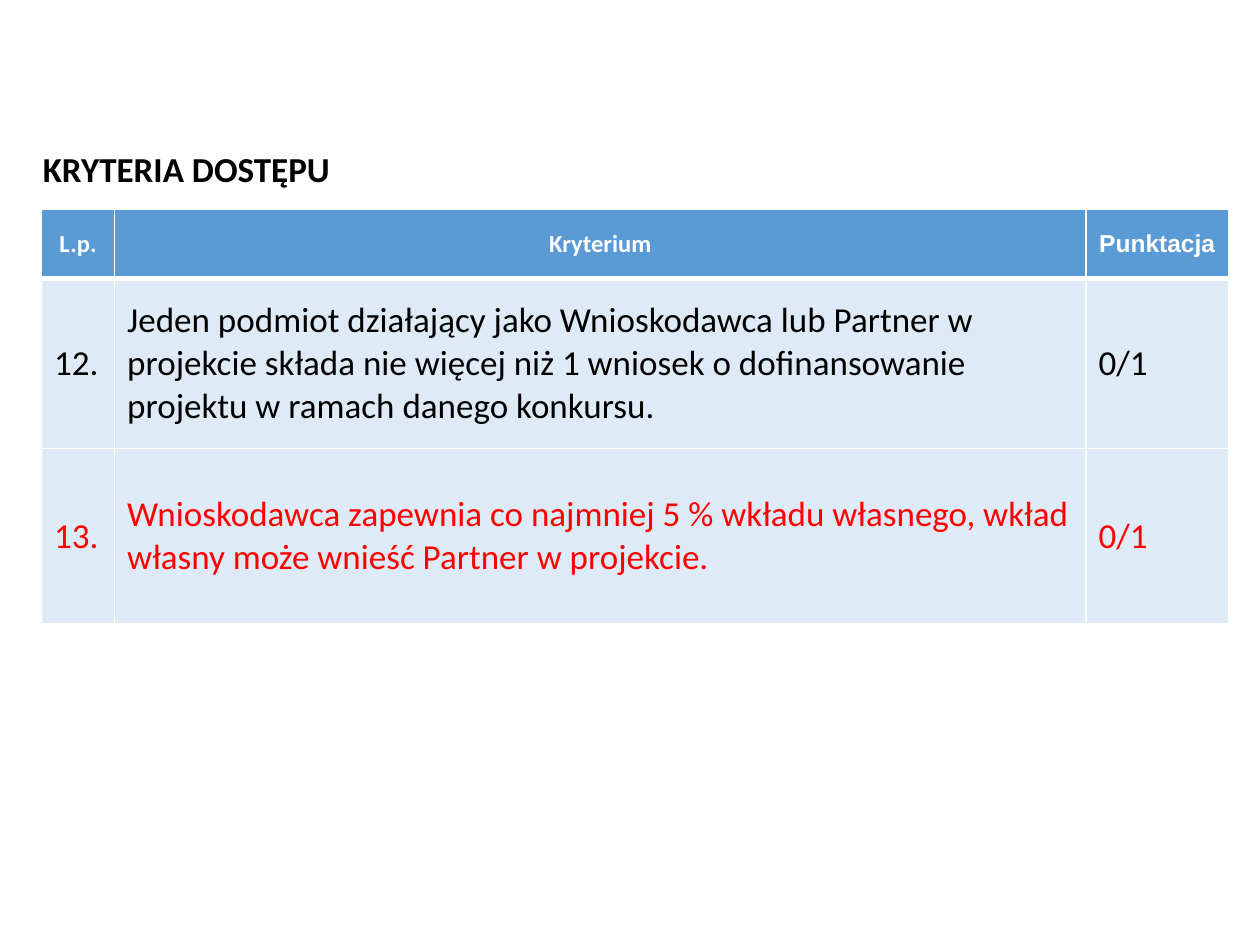
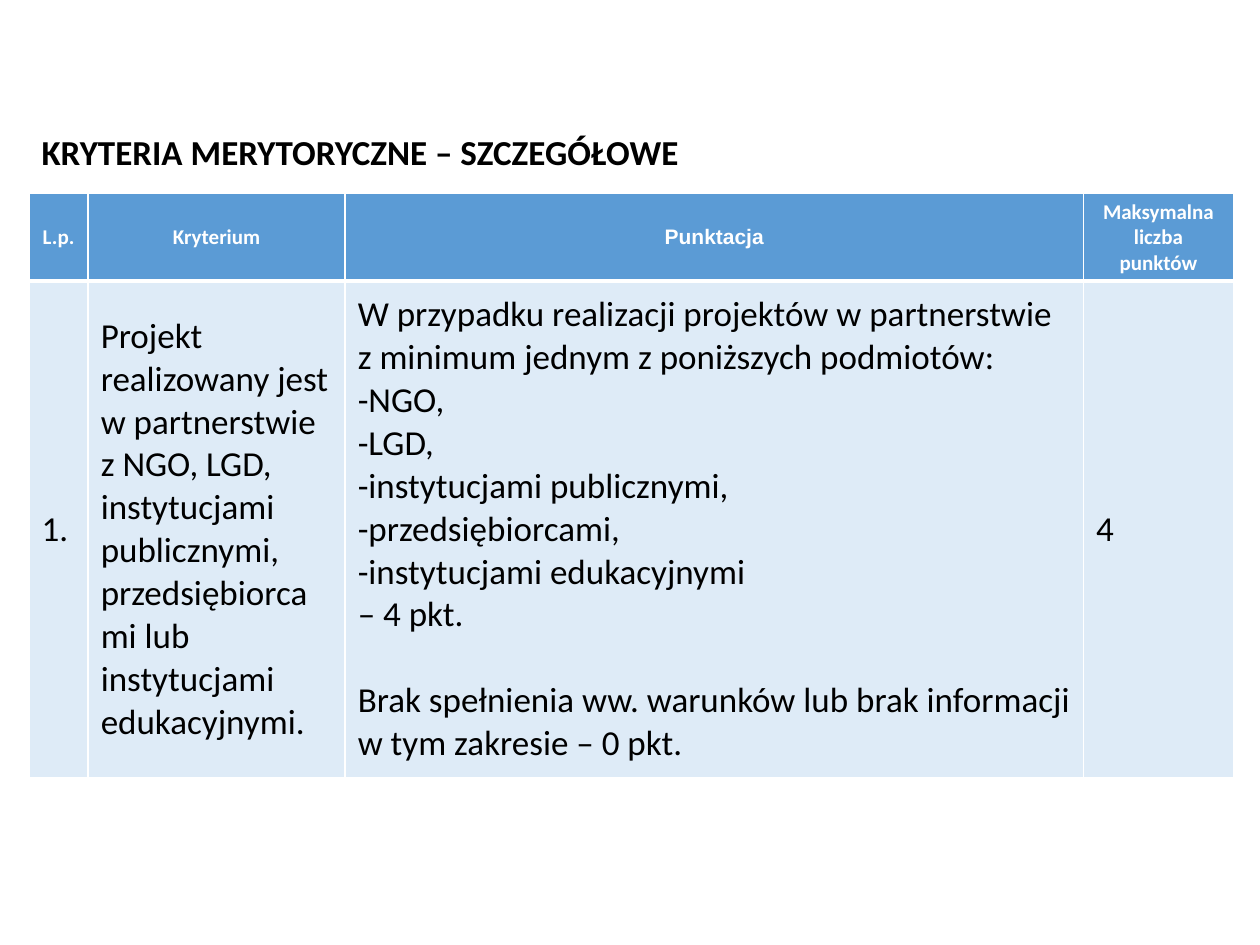
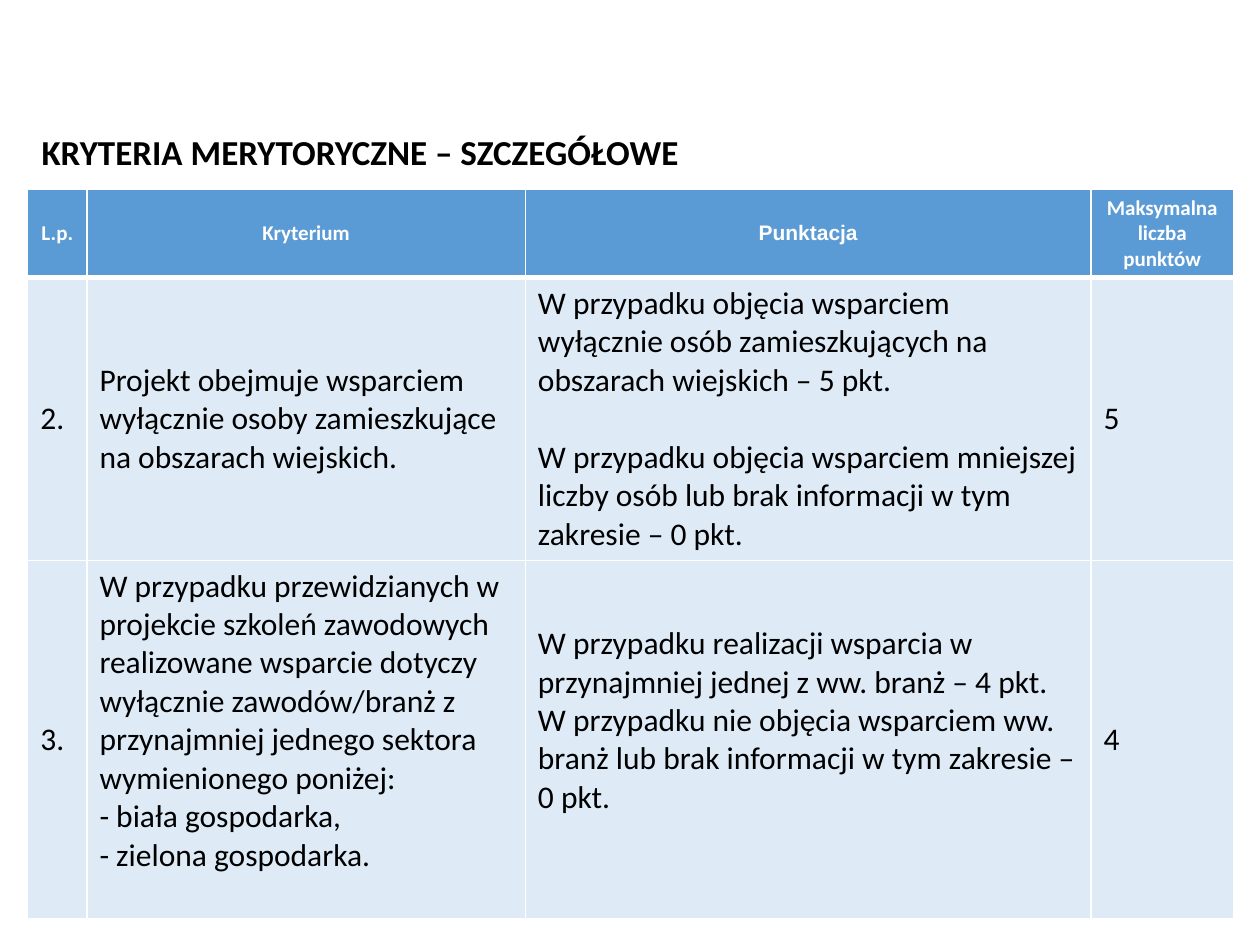
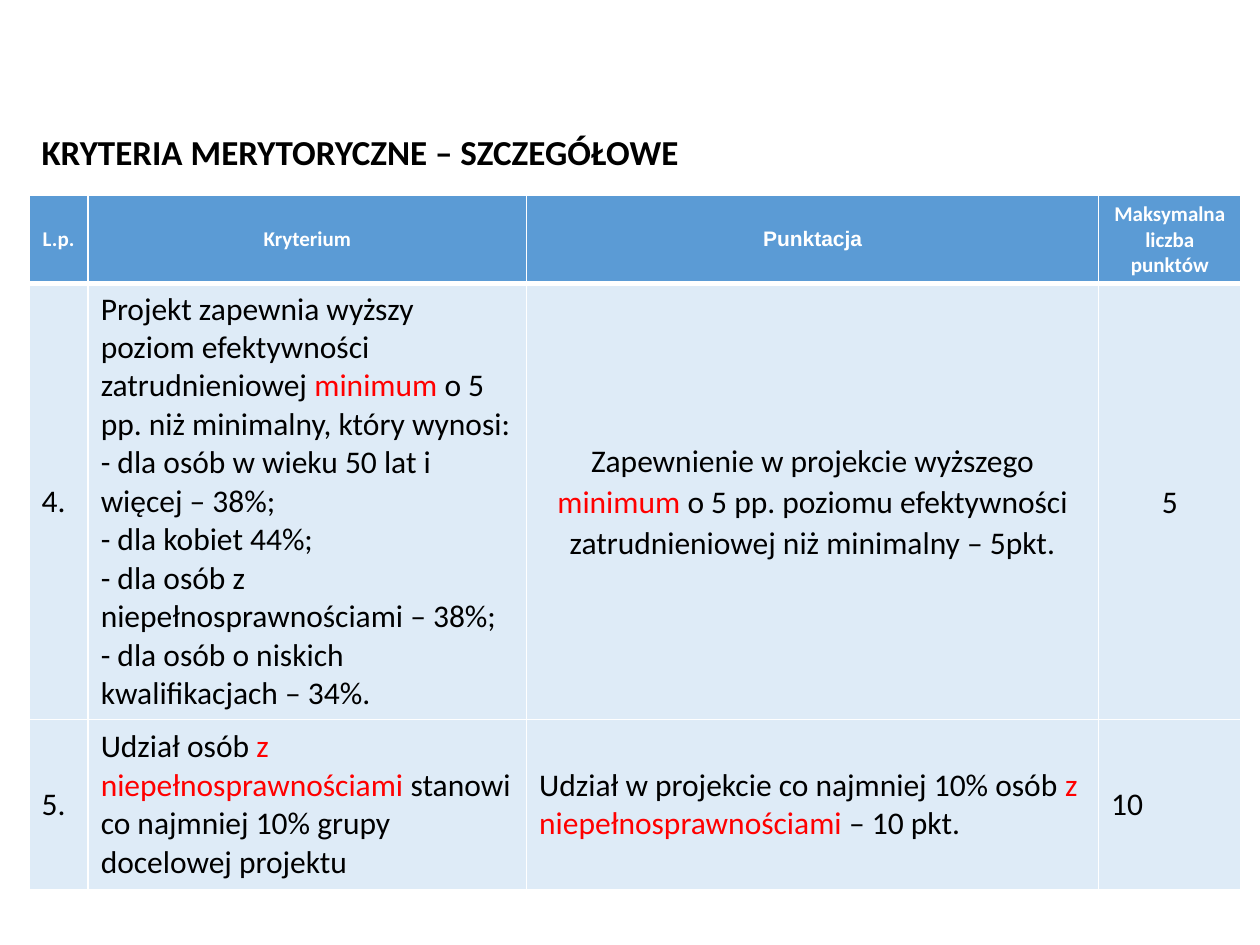
from lxml import etree
from pptx import Presentation
from pptx.dml.color import RGBColor
from pptx.enum import text
from pptx.oxml.ns import qn
from pptx.util import Inches, Pt

BLUE, PALE, WHITE, BLACK, RED = "5B9BD5", "DEEBF7", "FFFFFF", "000000", "FF0000"
GAP, MARK = "^", "*"
MERIT = {"title": "KRYTERIA MERYTORYCZNE – SZCZEGÓŁOWE", "spot": (0.23, 0.98, 5.42),
         "head": ["L.p.", "Kryterium", "Punktacja", "Maksymalna liczba punktów"], "top": 12}

PAGES = [
    {"title": "KRYTERIA DOSTĘPU", "spot": (0.24, 1.12, 3.7),
     "head": ["L.p.", "Kryterium", "Punktacja"], "top": 14, "size": 20,
     "at": (0.33, 1.66), "cols": [0.58, 7.71, 1.13], "rows": [0.55, 1.35, 1.39],
     "body": [
         ["12.",
          "Jeden podmiot działający jako Wnioskodawca lub Partner w projekcie składa "
          "nie więcej niż 1 wniosek o dofinansowanie projektu w ramach danego konkursu.",
          "0/1"],
         ["*13.*",
          "*Wnioskodawca zapewnia co najmniej 5 % wkładu własnego, wkład własny może "
          "wnieść Partner w projekcie.*",
          "*0/1*"]]},
    {**MERIT, "size": 20,
     "at": (0.23, 1.53), "cols": [0.47, 2.04, 5.86, 1.19], "rows": [0.7, 3.94],
     "body": [
         ["1.",
          "Projekt realizowany jest w partnerstwie z NGO, LGD, instytucjami publicznymi, "
          "przedsiębiorcami lub instytucjami edukacyjnymi.",
          "W przypadku realizacji projektów w partnerstwie z minimum jednym z poniższych "
          "podmiotów:\n-NGO,\n-LGD,\n-instytucjami publicznymi,\n-przedsiębiorcami,\n"
          "-instytucjami edukacyjnymi\n– 4 pkt.\n"
          "^Brak spełnienia ww. warunków lub brak informacji w tym zakresie – 0 pkt.",
          "4"]]},
    {**MERIT, "size": 18, "lift": [(2, 1), (2, 2)],
     "at": (0.22, 1.5), "cols": [0.47, 3.48, 4.49, 1.13], "rows": [0.7, 2.25, 2.84],
     "body": [
         ["2.",
          "Projekt obejmuje wsparciem wyłącznie osoby zamieszkujące na obszarach wiejskich.",
          "W przypadku objęcia wsparciem wyłącznie osób zamieszkujących na obszarach "
          "wiejskich – 5 pkt.\n"
          "^W przypadku objęcia wsparciem mniejszej liczby osób lub brak informacji "
          "w tym zakresie – 0 pkt.",
          "5"],
         ["3.",
          "W przypadku przewidzianych w projekcie szkoleń zawodowych realizowane wsparcie "
          "dotyczy wyłącznie zawodów/branż z przynajmniej jednego sektora wymienionego "
          "poniżej:\n- biała gospodarka,\n- zielona gospodarka.",
          "W przypadku realizacji wsparcia w przynajmniej jednej z ww. branż – 4 pkt.\n"
          "W przypadku nie objęcia wsparciem ww. branż lub brak informacji w tym "
          "zakresie – 0 pkt.",
          "4"]]},
    {**MERIT, "size": 18, "mid": [(1, 2), (1, 3)],
     "at": (0.23, 1.55), "cols": [0.47, 3.48, 4.54, 1.13], "rows": [0.7, 3.46, 1.35],
     "body": [
         ["4.",
          "Projekt zapewnia wyższy poziom efektywności zatrudnieniowej *minimum* o 5 pp. "
          "niż minimalny, który wynosi:\n- dla osób w wieku 50 lat i więcej – 38%;\n"
          "- dla kobiet 44%;\n- dla osób z niepełnosprawnościami – 38%;\n"
          "- dla osób o niskich kwalifikacjach – 34%.",
          "Zapewnienie w projekcie wyższego *minimum *o 5 pp. poziomu efektywności "
          "zatrudnieniowej niż minimalny – 5pkt.",
          "5"],
         ["5.",
          "Udział osób *z niepełnosprawnościami *stanowi co najmniej 10% grupy docelowej "
          "projektu",
          "Udział w projekcie co najmniej 10% osób *z niepełnosprawnościami* – 10 pkt.",
          "10"]]},
]


def paint(part, hue):
    part.rgb = RGBColor.from_string(hue)


def style(para, size, hue=None, bold=False, face="Calibri"):
    font = para.font
    font.size, font.bold, font.name = Pt(size), bold, face
    if hue:
        paint(font.color, hue)


def write(frame, words, size):
    for n, line in enumerate(words.split("\n")):
        para = frame.add_paragraph() if n else frame.paragraphs[0]
        if line.startswith(GAP):
            para.space_before = Pt(size * 1.22)
        runs = [(part, RED if k % 2 else BLACK)
                for k, part in enumerate(line.lstrip(GAP).split(MARK)) if part]
        hues = {hue for _, hue in runs}
        mixed = len(hues) > 1
        style(para, size, None if mixed else runs[0][1])
        for part, hue in runs:
            run = para.add_run()
            run.text = part
            if mixed:
                paint(run.font.color, hue)


def edge(cell, row):
    wide = {"T": 3 if row == 1 else 1, "B": 3 if row == 0 else 1}
    props = cell._tc.get_or_add_tcPr()
    for n, side in enumerate("LRTB"):
        line = etree.Element(qn("a:ln" + side), w=str(Pt(wide.get(side, 1))))
        fill = etree.SubElement(line, qn("a:solidFill"))
        etree.SubElement(fill, qn("a:srgbClr"), val=WHITE)
        props.insert(n, line)


def center(cell):
    cell.margin_left = cell.margin_right = Inches(0.07)
    cell.margin_top = cell.margin_bottom = 0
    para = cell.text_frame.paragraphs[0]
    para.alignment = text.PP_ALIGN.CENTER
    para.line_spacing, para.space_after = 1.07, Pt(8)


def add_title(slide, page):
    box = slide.shapes.title
    left, top, width = page["spot"]
    box.left, box.top = Inches(left), Inches(top)
    box.width, box.height = Inches(width), Inches(0.44)
    frame = box.text_frame
    frame.text = page["title"]
    frame.word_wrap = False
    frame.auto_size = text.MSO_AUTO_SIZE.SHAPE_TO_FIT_TEXT
    frame.vertical_anchor = text.MSO_ANCHOR.MIDDLE
    para = frame.paragraphs[0]
    para.alignment = text.PP_ALIGN.LEFT
    style(para, 20, BLACK, True)


def add_grid(slide, page):
    cols, rows = page["cols"], page["rows"]
    spot = [Inches(n) for n in (*page["at"], sum(cols), sum(rows))]
    grid = slide.shapes.add_table(len(rows), len(cols), *spot).table
    for col, width in zip(grid.columns, cols):
        col.width = Inches(width)
    for row, height in zip(grid.rows, rows):
        row.height = Inches(height)
    for r, line in enumerate([page["head"], *page["body"]]):
        for c, words in enumerate(line):
            cell = grid.cell(r, c)
            cell.vertical_anchor = text.MSO_ANCHOR.MIDDLE
            cell.fill.solid()
            paint(cell.fill.fore_color, PALE if r else BLUE)
            edge(cell, r)
            if r:
                write(cell.text_frame, words, page["size"])
            else:
                cell.text = words
                para = cell.text_frame.paragraphs[0]
                para.alignment = text.PP_ALIGN.CENTER
                style(para, page["top"], WHITE, True,
                      "Arial" if words == "Punktacja" else "Calibri")
            if (r, c) in page.get("mid", []):
                center(cell)
            if (r, c) in page.get("lift", []):
                cell.margin_bottom = Inches(0.35)


def main():
    deck = Presentation()
    deck.slide_width, deck.slide_height = Inches(10), Inches(7.5)
    for page in PAGES:
        slide = deck.slides.add_slide(deck.slide_layouts[5])
        add_title(slide, page)
        add_grid(slide, page)
    deck.save("out.pptx")


if __name__ == "__main__":
    main()
